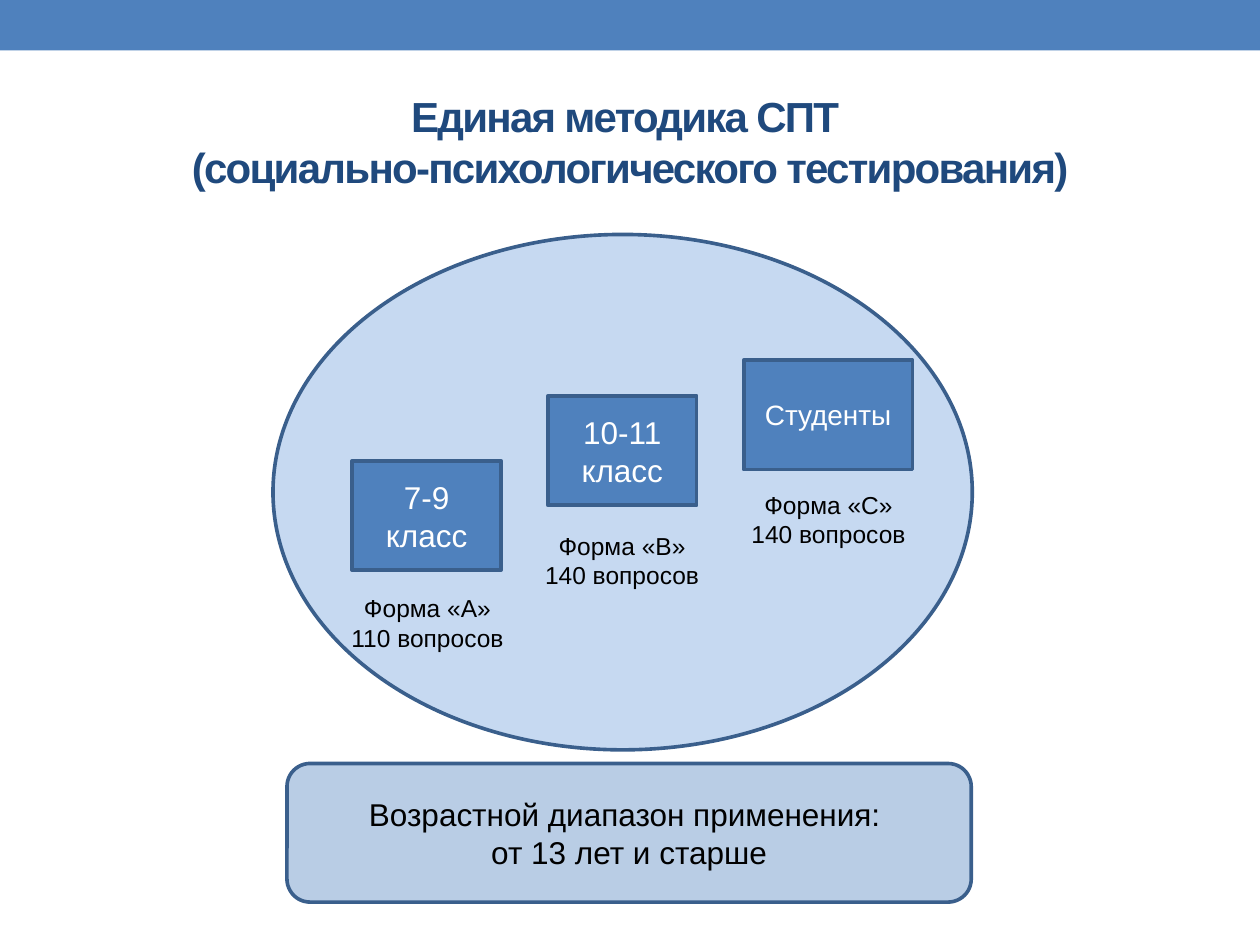
import pptx
import pptx.util
import pptx.dml.color
import pptx.enum.shapes
import pptx.enum.text

Pt = pptx.util.Pt
SHAPES = pptx.enum.shapes.MSO_SHAPE
BLUE, EDGE = "4F81BD", "3A5F8C"


def color(value):
    return pptx.dml.color.RGBColor.from_string(value)


def write(box, text, size, ink="000000", bold=False, spacing=None, anchor="MIDDLE", wrap=True):
    """Fill a box with centred text: \\n starts a paragraph, \\v breaks a line."""
    frame = box.text_frame
    frame.word_wrap = wrap
    frame.vertical_anchor = pptx.enum.text.MSO_ANCHOR[anchor]
    frame.text = text
    for para in frame.paragraphs:
        para.alignment = pptx.enum.text.PP_ALIGN.CENTER
        for span in para.runs:
            span.font.name = "Arial"
            span.font.size = Pt(size)
            span.font.bold = bold
            span.font.color.rgb = color(ink)
            if spacing is not None:
                span.font._element.set("spc", str(spacing))


deck = pptx.Presentation()
deck.slide_width, deck.slide_height = Pt(720), Pt(540)
page = deck.slides.add_slide(deck.slide_layouts[6])

# Top band, age range panel, large ellipse and the three group boxes
shapes = [
    (SHAPES.RECTANGLE, 0, 0, 720, 28.8, BLUE, None, None),
    (SHAPES.ROUNDED_RECTANGLE, 164, 436.3, 391, 79.2, "B9CDE5",
     "Возрастной диапазон применения: \nот 13 лет и старше", (18, "000000")),
    (SHAPES.OVAL, 156, 134, 399.6, 294.5, "C6D9F1", None, None),
    (SHAPES.RECTANGLE, 201.3, 263.3, 85, 62.6, BLUE, "7-9 класс", (18, "FFFFFF")),
    (SHAPES.RECTANGLE, 313.1, 226.2, 85, 62.6, BLUE, "10-11 класс", (18, "FFFFFF")),
    (SHAPES.RECTANGLE, 425, 205.7, 96.5, 62.6, BLUE, "Студенты", (16, "FFFFFF")),
]
for kind, left, top, width, height, fill, text, style in shapes:
    shape = page.shapes.add_shape(kind, Pt(left), Pt(top), Pt(width), Pt(height))
    shape.shadow.inherit = False
    shape.fill.solid()
    shape.fill.fore_color.rgb = color(fill)
    if top == 0:
        shape.line.fill.background()
    else:
        shape.line.color.rgb = color(EDGE)
        shape.line.width = Pt(2.08)
    if text:
        size, ink = style
        write(shape, text, size, ink=ink)

# Title
title = page.shapes.add_textbox(Pt(36), Pt(41.8), Pt(648), Pt(77.8))
write(title, "Единая методика СПТ \v(социально-психологического тестирования)", 24,
      ink="1F497D", bold=True, spacing=-100)

# Form captions under the group boxes
captions = [("А", 110, 193, 335.5), ("В", 140, 304.2, 299.8), ("С", 140, 422.2, 276.5)]
for letter, questions, left, top in captions:
    caption = page.shapes.add_textbox(Pt(left), Pt(top), Pt(102.6), Pt(41))
    write(caption, f"Форма «{letter}»\n{questions} вопросов", 14, anchor="TOP", wrap=False)

deck.save("out.pptx")
